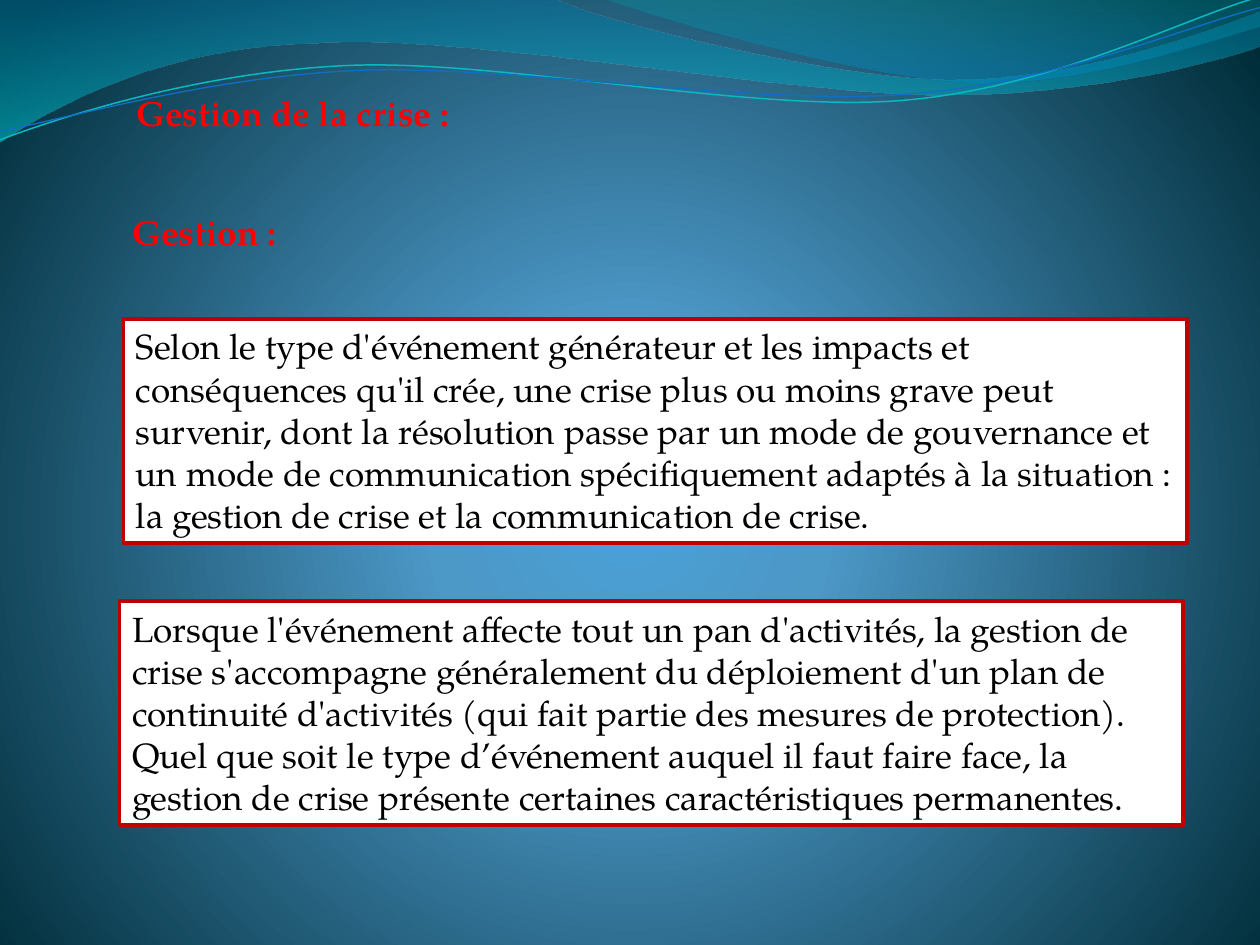
from lxml import etree
from pptx import Presentation
from pptx.dml.color import RGBColor
from pptx.enum import shapes, text
from pptx.oxml import ns
from pptx.util import Inches, Pt

THEME = {
    "font": "TeX Gyre Pagella", "size": 20,
    "heading": "FF0000", "body": "000000", "panel": "FFFFFF", "border": "C00000",
    "border_width": 2,
    # gradient stops: position %, colour, opacity %
    "background": [(0, "4AA0D6", 100), (25, "4C98C7", 100), (100, "002C38", 100)],
    "wide_wave": [(0, "0074A1", 45), (100, "00C6CF", 55)],
    "right_wave": [(0, "00A1A9", 30), (80, "008BBF", 45)],
}

TITLE = ("Gestion de la crise :", 0.98, 0.68)
SUBTITLE = ("Gestion :", 0.95, 1.62)
HEADING_SIZE = (3.35, 0.45)

PANELS = [
    (["Selon le type d'événement générateur et les impacts et conséquences qu'il crée, "
      "une crise plus ou moins grave peut survenir, dont la résolution passe par un mode "
      "de gouvernance et un mode de communication spécifiquement adaptés à la situation : "
      "la gestion de crise et la communication de crise."], 0.98, 2.53),
    (["Lorsque l'événement affecte tout un pan d'activités, la gestion de crise "
      "s'accompagne généralement du déploiement d'un plan de continuité d'activités "
      "(qui fait partie des mesures de protection).",
      "Quel que soit le type d’événement auquel il faut faire face, la gestion de crise "
      "présente certaines caractéristiques permanentes."], 0.95, 4.77),
]
PANEL_SIZE = (8.44, 1.78)

# Each outline is a start point, then line ends (2 numbers) or cubic curves (6 numbers).
WAVES = [
    ("wide_wave", [(0, 0), (4.4, -0.01), (4.76, 0.17, 6.64, 0.63, 7.58, 0.63),
                   (8.53, 0.63, 9.58, 0.26, 10, 0.09), (10.01, 0.36),
                   (9.83, 0.44, 8.7, 0.76, 7.46, 0.75), (6.22, 0.75, 3.82, 0.28, 2.57, 0.34),
                   (1.29, 0.36, 0.46, 0.83, -0.01, 1.13), (0, 0)]),
    ("right_wave", [(4.79, -0.01), (5.09, 0.11, 6.82, 0.62, 7.69, 0.65),
                    (8.56, 0.69, 9.61, 0.32, 10, 0.21), (10, 0), (4.79, -0.01)]),
]
STRANDS = [
    ("0AB8BF", 0.85, [(0, 1.11), (0.48, 0.93, 1.58, 0.57, 2.77, 0.52),
                      (3.95, 0.47, 5.93, 0.89, 7.13, 0.8), (8.33, 0.71, 9.38, 0.15, 9.98, -0.02)]),
    ("0F6FC6", 0.75, [(0, 1.04), (0.47, 0.96, 1.64, 0.61, 2.83, 0.56),
                      (4.03, 0.51, 5.97, 0.84, 7.17, 0.75), (8.36, 0.67, 9.41, 0.21, 10, 0.06)]),
]


def rgb(colour):
    return RGBColor.from_string(colour)


def set_gradient(fill, owner, stops, centre=None):
    """Vertical gradient, or a circular one closing on the centre (l, t, r, b in %)."""
    fill.gradient()
    gradient = next(owner.iter(ns.qn("a:gradFill")))
    for child in list(gradient):
        gradient.remove(child)

    def add(parent, tag, **attributes):
        values = {key: str(value) for key, value in attributes.items()}
        return etree.SubElement(parent, ns.qn(tag), values)

    stop_list = add(gradient, "a:gsLst")
    for position, colour, opacity in stops:
        stop = add(stop_list, "a:gs", pos=position * 1000)
        tint = add(stop, "a:srgbClr", val=colour)
        if opacity < 100:
            add(tint, "a:alpha", val=opacity * 1000)
    if centre:
        sides = {side: value * 1000 for side, value in zip("ltrb", centre)}
        add(add(gradient, "a:path", path="circle"), "a:fillToRect", **sides)
    else:
        add(gradient, "a:lin", ang=90 * 60000, scaled=0)


def add_outline(slide, outline, close):
    """Freeform through every point, whose triples of lines then become cubic curves."""
    start, *segments = outline
    points = [(Inches(segment[i]), Inches(segment[i + 1]))
              for segment in segments for i in range(0, len(segment), 2)]
    builder = slide.shapes.build_freeform(Inches(start[0]), Inches(start[1]))
    builder.add_line_segments(points, close=close)
    shape = builder.convert_to_shape()
    shape.shadow.inherit = False

    lines = iter(list(shape.element.iter(ns.qn("a:lnTo"))))
    for segment in segments:
        line = next(lines)
        if len(segment) == 2:
            continue
        curve = etree.Element(ns.qn("a:cubicBezTo"))
        line.addprevious(curve)
        for part in (line, next(lines), next(lines)):
            curve.append(part[0])
            part.getparent().remove(part)
    return shape


def write(shape, paragraphs, colour, bold=False):
    frame = shape.text_frame
    frame.text = "\n".join(paragraphs)
    frame.word_wrap = True
    frame.auto_size = text.MSO_AUTO_SIZE.SHAPE_TO_FIT_TEXT
    frame.vertical_anchor = text.MSO_ANCHOR.TOP
    for paragraph in frame.paragraphs:
        paragraph.alignment = text.PP_ALIGN.LEFT
        for run in paragraph.runs:
            run.font.name, run.font.size = THEME["font"], Pt(THEME["size"])
            run.font.bold, run.font.color.rgb = bold, rgb(colour)


def box(left, top, size):
    return [Inches(value) for value in (left, top, *size)]


def main():
    deck = Presentation()
    deck.slide_width, deck.slide_height = Inches(10), Inches(7.5)
    slide = deck.slides.add_slide(deck.slide_layouts[5])
    set_gradient(slide.background.fill, slide.element, THEME["background"], (10, 110, 10, 100))

    for stops, outline in WAVES:
        wave = add_outline(slide, outline, close=True)
        set_gradient(wave.fill, wave.element, THEME[stops])
        wave.line.fill.background()
    for colour, width, outline in STRANDS:
        strand = add_outline(slide, outline, close=False)
        strand.fill.background()
        strand.line.color.rgb, strand.line.width = rgb(colour), Pt(width)

    title = slide.shapes.title
    wording, left, top = TITLE
    title.left, title.top, title.width, title.height = box(left, top, HEADING_SIZE)
    write(title, [wording], THEME["heading"], bold=True)
    slide.shapes.element.append(title.element)  # in front of the waves

    for paragraphs, left, top in PANELS:
        panel = slide.shapes.add_shape(shapes.MSO_SHAPE.RECTANGLE, *box(left, top, PANEL_SIZE))
        panel.shadow.inherit = False
        panel.fill.solid()
        panel.fill.fore_color.rgb = rgb(THEME["panel"])
        panel.line.color.rgb = rgb(THEME["border"])
        panel.line.width = Pt(THEME["border_width"])
        write(panel, paragraphs, THEME["body"])

    wording, left, top = SUBTITLE
    subtitle = slide.shapes.add_textbox(*box(left, top, HEADING_SIZE))
    write(subtitle, [wording], THEME["heading"], bold=True)

    deck.save("out.pptx")


if __name__ == "__main__":
    main()
